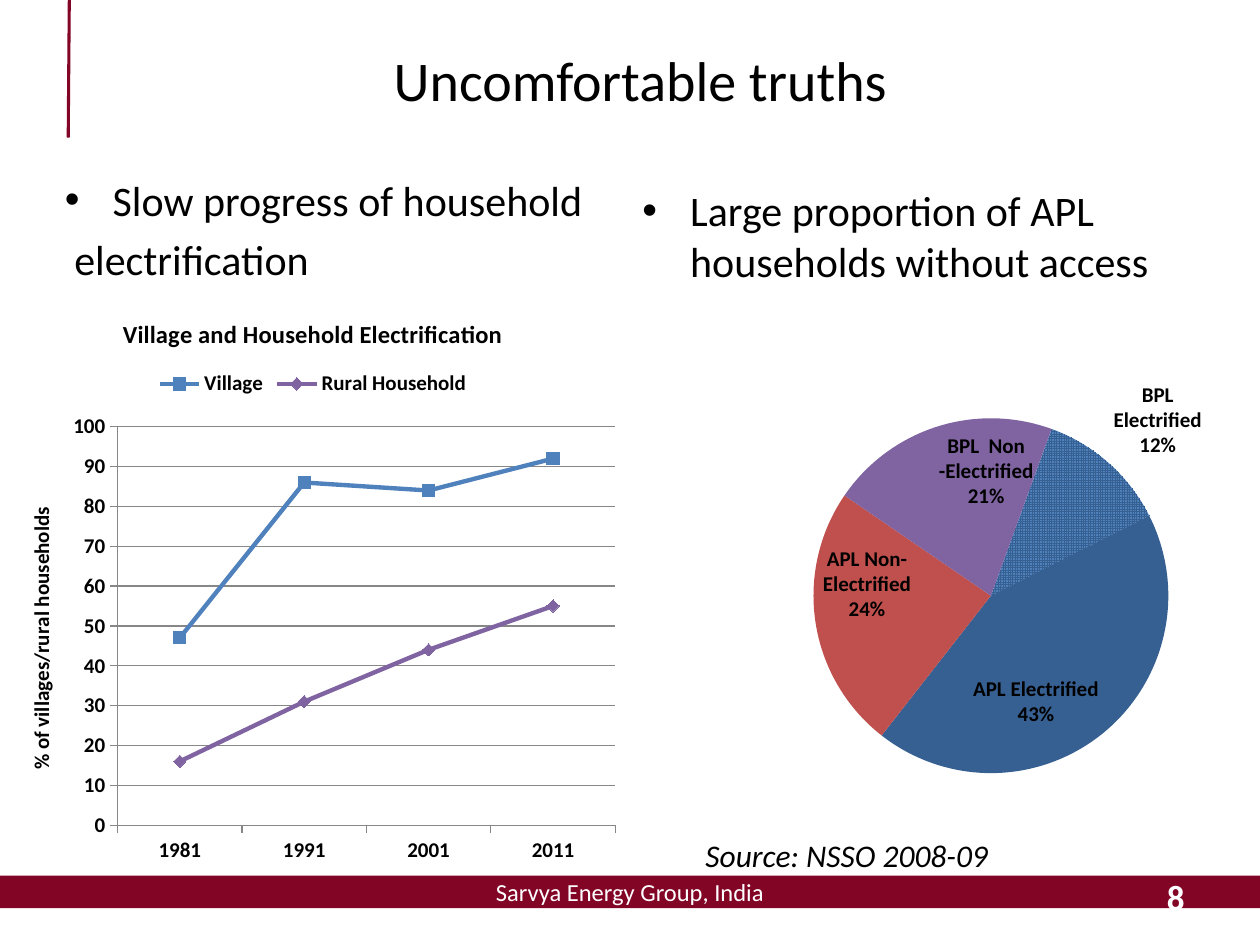
"""Build the slide on rural electrification with a line chart and a pie chart."""
from lxml import etree
from pptx import Presentation
from pptx import util as u
from pptx.chart import data as cd
from pptx.dml.color import RGBColor
from pptx.enum import chart as ch, dml, shapes, text
from pptx.oxml import parse_xml
from pptx.oxml.ns import qn

HUES = {"wine": "830526", "white": "FFFFFF", "ink": "000000", "blue": "4F81BD",
        "navy": "376092", "red": "C0504D", "plum": "8064A2", "grey": "878787"}
HUE = {name: RGBColor.from_string(code) for name, code in HUES.items()}
CELL = u.Inches(1) / 12
AL, MID, TOP = text.PP_ALIGN, text.MSO_ANCHOR.MIDDLE, text.MSO_ANCHOR.TOP


def style(font, size, hue="ink", **more):
    for key, val in dict(name="Calibri", size=u.Pt(size), **more).items():
        setattr(font, key, val)
    font.color.rgb = HUE[hue]


def write(shape, lines, size, align=AL.LEFT, anchor=MID, wrap=True, **look):
    frame = shape.text_frame
    for key, val in dict(text="\n".join(lines), word_wrap=wrap, vertical_anchor=anchor,
                         auto_size=text.MSO_AUTO_SIZE.NONE).items():
        setattr(frame, key, val)
    for para in frame.paragraphs:
        para.alignment = align
        style(para.runs[0].font, size, **look)
    return frame


deck = Presentation()
deck.slide_width, deck.slide_height = int(120 * CELL), int(90 * CELL)
slide = deck.slides.add_slide(deck.slide_layouts[5])
parts = slide.shapes
spots = {"title": (7, 0, 108, 15), "band": (0, 83.4, 120, 3.1), "left": (5, 16, 53, 52),
         "right": (60, 17, 53, 52), "page": (86, 83, 28, 4.8), "line": (-0.2, 28, 60, 55),
         "pie": (65, 31, 52, 52), "source": (66, 79, 51, 4.8)}
spots = {name: [int(n * CELL) for n in spot] for name, spot in spots.items()}

# the band and rule sit behind everything else
band = parts.add_shape(shapes.MSO_SHAPE.RECTANGLE, *spots["band"])
band.shadow.inherit = False
band.fill.solid()
band.fill.fore_color.rgb = HUE["wine"]
band.line.fill.background()
write(band, ["Sarvya Energy Group, India"], 14, AL.CENTER, wrap=False, hue="white")

rule = parts.add_connector(shapes.MSO_CONNECTOR.STRAIGHT,
                           *[int(n * CELL) for n in (6.6, 0, 6.5, 13.1)])
rule.line.color.rgb = HUE["wine"]
rule.line.width = u.Pt(1.75)
etree.SubElement(rule._element.spPr, qn("a:effectLst"))

title = parts.title
for key, val in zip(("left", "top", "width", "height"), spots["title"]):
    setattr(title, key, val)
write(title, ["Uncomfortable truths"], 32, AL.CENTER)

points = {"left": ["Slow progress of household", " electrification"],
          "right": ["Large proportion of APL households without access"]}
for side, lines in points.items():
    frame = write(parts.add_textbox(*spots[side]), lines, 24, anchor=TOP)
    for para in frame.paragraphs:
        para.space_before = u.Pt(4.8)
    props = frame.paragraphs[0]._p.get_or_add_pPr()
    props.set("marL", str(u.Inches(0.38)))
    props.set("indent", str(-u.Inches(0.38)))
    etree.SubElement(props, qn("a:buFont")).set("typeface", "Arial")
    etree.SubElement(props, qn("a:buChar")).set("char", "•")

write(parts.add_textbox(*spots["page"]), ["8"], 20, AL.RIGHT, hue="white", bold=True)

data = cd.CategoryChartData()
data.categories = ["1981", "1991", "2001", "2011"]
data.add_series("Village", (47, 86, 84, 92))
data.add_series("Rural Household", (16, 31, 44, 55))
line = parts.add_chart(ch.XL_CHART_TYPE.LINE_MARKERS, *spots["line"], data).chart
style(line.font, 12, bold=True)
line.has_title = line.has_legend = True
line.chart_title.text_frame.text = "Village and Household Electrification"
style(line.chart_title.text_frame.paragraphs[0].runs[0].font, 14, bold=True)
line.legend.position = ch.XL_LEGEND_POSITION.TOP
line.legend.include_in_layout = False
style(line.legend.font, 12, bold=True)
marks = ch.XL_MARKER_STYLE
for row, hue, mark in zip(line.plots[0].series, ("blue", "plum"), (marks.SQUARE, marks.DIAMOND)):
    row.smooth = False
    row.format.line.width = u.Pt(2.5)
    row.format.line.color.rgb = HUE[hue]
    row.marker.style, row.marker.size = mark, 7
    row.marker.format.fill.solid()
    row.marker.format.fill.fore_color.rgb = HUE[hue]
    row.marker.format.line.color.rgb = HUE[hue]
value = line.value_axis
for key, val in dict(minimum_scale=0, maximum_scale=100, major_unit=10,
                     has_major_gridlines=True, has_title=True).items():
    setattr(value, key, val)
value.major_gridlines.format.line.color.rgb = HUE["grey"]
value.axis_title.text_frame.text = "% of villages/rural households"
style(value.axis_title.text_frame.paragraphs[0].runs[0].font, 12, bold=True)
for axis in (value, line.category_axis):
    axis.major_tick_mark = ch.XL_TICK_MARK.OUTSIDE
    axis.format.line.color.rgb = HUE["grey"]
    style(axis.tick_labels.font, 12, bold=True)

data = cd.CategoryChartData()
data.categories = ["BPL Electrified", "APL Electrified", "APL Non Electrified",
                   "BPL  Non Electrified"]
data.add_series("Series 1", (12, 43, 24, 21))
pie = parts.add_chart(ch.XL_CHART_TYPE.PIE, *spots["pie"], data).chart
pie.has_title = pie.has_legend = False
style(pie.font, 16)
pie.plots[0].vary_by_categories = True
ring = pie.plots[0].series[0]
fill = ring.points[0].format.fill
fill.patterned()
fill.pattern = dml.MSO_PATTERN.SMALL_GRID
fill.fore_color.rgb, fill.back_color.rgb = HUE["navy"], HUE["blue"]
for spot, hue in enumerate(("navy", "red", "plum"), 1):
    fill = ring.points[spot].format.fill
    fill.solid()
    fill.fore_color.rgb = HUE[hue]
tags = ring.data_labels
for key, val in dict(show_value=False, show_category_name=True, show_percentage=True,
                     number_format="0%", number_format_is_linked=False,
                     position=ch.XL_LABEL_POSITION.INSIDE_END).items():
    setattr(tags, key, val)
style(tags.font, 12, bold=True)
tag = ring.points[0].data_label
style(tag.font, 12, bold=True)
tag.position = ch.XL_LABEL_POSITION.OUTSIDE_END
for spot, words in {2: "APL Non- Electrified\n24%", 3: "BPL  Non -Electrified\n21%"}.items():
    tag = ring.points[spot].data_label
    tag.text_frame.text = words
    for para in tag.text_frame.paragraphs:
        style(para.runs[0].font, 12, bold=True)
    tag.position = ch.XL_LABEL_POSITION.INSIDE_END
for name, flag in {"showVal": "0", "showCatName": "1", "showPercent": "1"}.items():
    for node in ring._element.xpath(f".//c:dLbl/c:{name}"):
        node.set("val", flag)
for node in ring._element.xpath(".//c:showBubbleSize"):
    mark = etree.Element(qn("c:separator"))
    mark.text = "\n"
    node.addnext(mark)
pies = pie._chartSpace.xpath(".//c:pieChart")[0]
for old in pies.xpath("c:firstSliceAng"):
    pies.remove(old)
etree.SubElement(pies, qn("c:firstSliceAng")).set("val", "20")

frames = ((line, (0.19, 0.23, 0.79, 0.69)), (pie, (0.24, 0.17, 0.65, 0.65)))
for chart, shares in frames:
    plot = chart._chartSpace.xpath(".//c:plotArea")[0]
    for old in plot.xpath("c:layout"):
        plot.remove(old)
    sizes = "".join(f'<c:{key} val="{val}"/>' for key, val in zip("xywh", shares))
    plot.insert(0, parse_xml(
        '<c:layout xmlns:c="http://schemas.openxmlformats.org/drawingml/2006/chart">'
        '<c:manualLayout><c:layoutTarget val="inner"/><c:xMode val="edge"/>'
        f'<c:yMode val="edge"/>{sizes}</c:manualLayout></c:layout>'))

write(parts.add_textbox(*spots["source"]), ["Source: NSSO 2008-09"], 18, anchor=TOP, italic=True)
deck.save("out.pptx")
